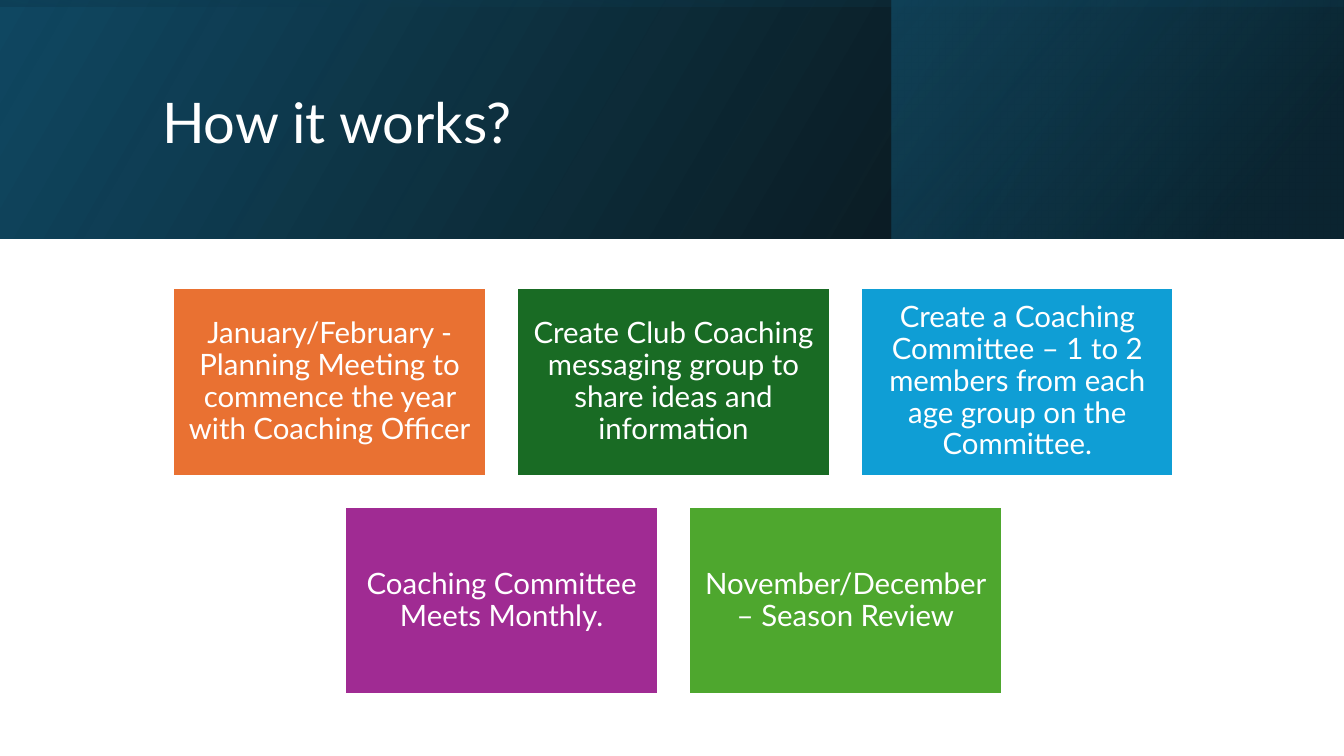
from lxml.etree import SubElement
from pptx import Presentation
from pptx.dml.color import RGBColor
from pptx.enum.shapes import MSO_SHAPE
from pptx.enum.text import MSO_ANCHOR, PP_ALIGN
from pptx.oxml.ns import qn
from pptx.util import Inches, Pt

FONT = "Lato"
WHITE = "FFFFFF"
TITLE = "How it works?"

BANNER_LAYERS = [
    {"box": (0, 0, 13.33, 2.37), "rotation": 0, "angle": 330,
     "stops": [(0, "000000", 96), (100, "104862", 100)]},
    {"box": (8.84, 0, 4.48, 2.37), "rotation": 0, "angle": 320,
     "stops": [(19, "0B3041", 68), (100, "156082", 48)]},
    {"box": (5.48, -5.48, 2.37, 13.33), "rotation": 270, "angle": 350,
     "stops": [(23, "104862", 16), (99, "000000", 45)]},
]

STEP_ROWS = [
    [("January/February - Planning Meeting to commence the year with Coaching Officer", "E97132"),
     ("Create Club Coaching messaging group to share ideas and information", "196B24"),
     ("Create a Coaching Committee – 1 to 2 members from each age group on the Committee.", "0F9ED5")],
    [("Coaching Committee Meets Monthly.", "A02B93"),
     ("November/December – Season Review", "4EA72E")],
]
CARD_WIDTH, CARD_HEIGHT = 3.1, 1.86
COLUMN_PITCH, ROW_PITCH = 3.41, 2.17
GRID_LEFT, GRID_TOP = 1.72, 2.86


def color(value):
    return RGBColor.from_string(value)


def add_rectangle(slide, box):
    shape = slide.shapes.add_shape(MSO_SHAPE.RECTANGLE, *map(Inches, box))
    shape.shadow.inherit = False
    return shape


def write_text(shape, text, size, alignment):
    text_frame = shape.text_frame
    text_frame.text = text
    text_frame.word_wrap = True
    text_frame.vertical_anchor = MSO_ANCHOR.MIDDLE
    paragraph = text_frame.paragraphs[0]
    paragraph.alignment = alignment
    paragraph.line_spacing = 0.9
    font = paragraph.runs[0].font
    font.name = FONT
    font.size = Pt(size)
    font.color.rgb = color(WHITE)


def add_banner_layer(slide, layer):
    shape = add_rectangle(slide, layer["box"])
    shape.rotation = layer["rotation"]
    shape.line.fill.background()
    shape.fill.gradient()
    shape.fill.gradient_angle = 360 - layer["angle"]
    for stop, (position, value, _) in zip(shape.fill.gradient_stops, layer["stops"]):
        stop.position = position / 100
        stop.color.rgb = color(value)
    properties = shape.element.spPr
    properties.find(qn("a:xfrm")).set("flipH", "1")
    for element, (_, _, opacity) in zip(properties.iter(qn("a:srgbClr")), layer["stops"]):
        SubElement(element, qn("a:alpha")).set("val", str(opacity * 1000))


def add_card(slide, left, top, text, fill):
    shape = add_rectangle(slide, (left, top, CARD_WIDTH, CARD_HEIGHT))
    shape.fill.solid()
    shape.fill.fore_color.rgb = color(fill)
    shape.line.color.rgb = color(WHITE)
    shape.line.width = Pt(1.5)
    write_text(shape, text, 21, PP_ALIGN.CENTER)
    text_frame = shape.text_frame
    text_frame.margin_left = text_frame.margin_right = Inches(0.09)
    text_frame.margin_top = text_frame.margin_bottom = Inches(0.09)


def main():
    presentation = Presentation()
    presentation.slide_width = Inches(13.33)
    presentation.slide_height = Inches(7.5)
    slide = presentation.slides.add_slide(presentation.slide_layouts[6])

    for layer in BANNER_LAYERS:
        add_banner_layer(slide, layer)

    title = slide.shapes.add_textbox(Inches(1.51), Inches(0.38), Inches(10.63), Inches(1.72))
    write_text(title, TITLE, 40, PP_ALIGN.LEFT)

    most_columns = max(len(row) for row in STEP_ROWS)
    for row_index, row in enumerate(STEP_ROWS):
        row_left = GRID_LEFT + (most_columns - len(row)) * COLUMN_PITCH / 2
        top = GRID_TOP + row_index * ROW_PITCH
        for column_index, (text, fill) in enumerate(row):
            add_card(slide, row_left + column_index * COLUMN_PITCH, top, text, fill)

    presentation.save("out.pptx")


if __name__ == "__main__":
    main()
